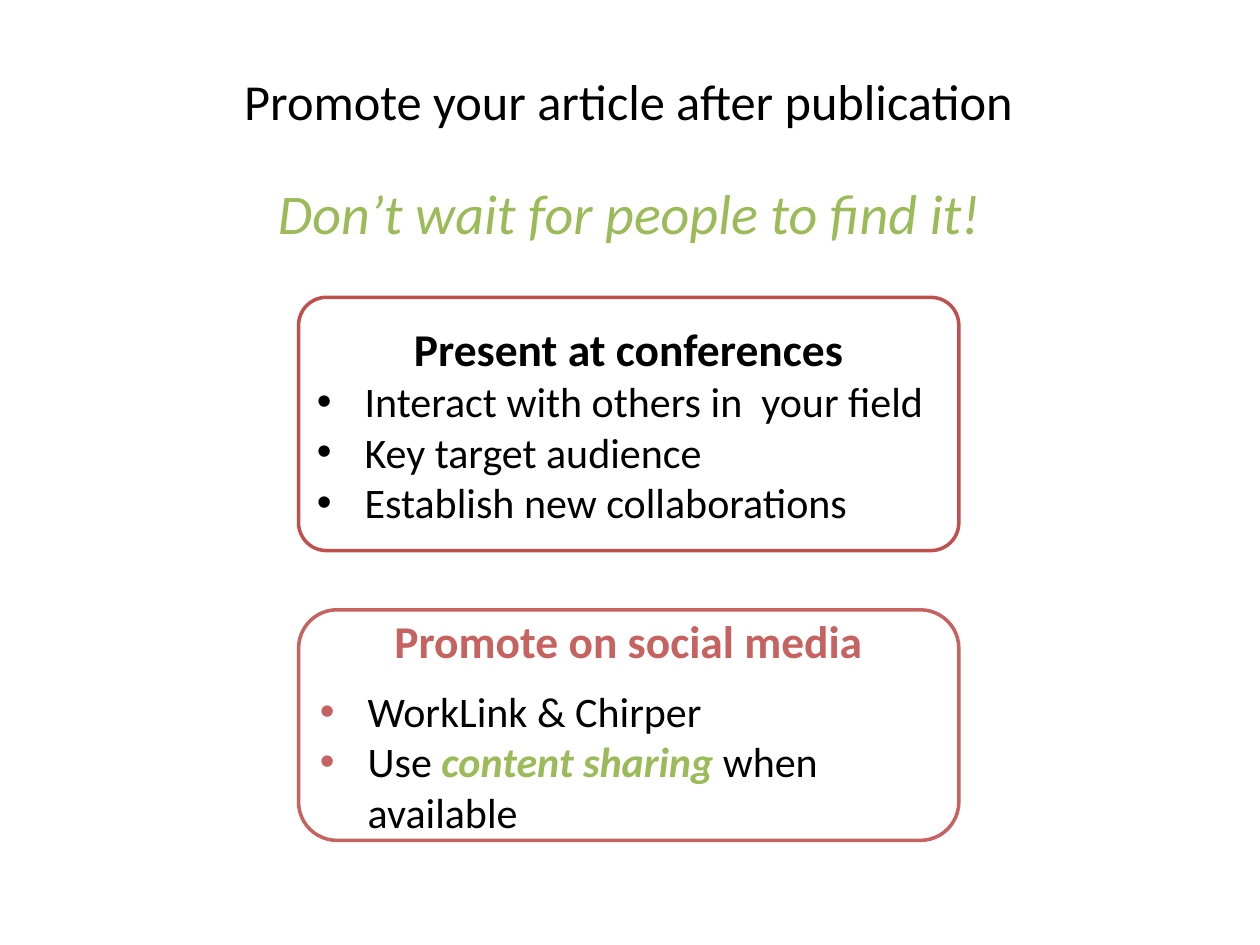
"""Builds a slide on promoting an article after publication."""
from lxml import etree
from pptx import Presentation
from pptx import util as u
from pptx.dml.color import RGBColor
from pptx.enum import shapes, text
from pptx.oxml import ns

BLACK, WHITE, GREEN = "000000", "FFFFFF", "9BBB59"
RED, ROSE = "C0504D", "C6625F"
BOX_LEFT, BOX_WIDTH = 2.37, 5.24


def color(value):
    """Turn a hex string into a colour."""
    return RGBColor.from_string(value)


def add_text(paragraph, content, size=24, fill=BLACK, bold=False, italic=False):
    """Append one formatted run to a paragraph."""
    run = paragraph.add_run()
    run.text = content
    font = run.font
    font.name, font.size = "Calibri", u.Pt(size)
    font.bold, font.italic = bold, italic
    font.color.rgb = color(fill)


def add_bullet(paragraph, fill):
    """Give a paragraph a coloured bullet and a hanging indent."""
    paragraph.alignment = text.PP_ALIGN.LEFT
    properties = paragraph._p.get_or_add_pPr()
    indent = u.Inches(0.38)
    properties.set("marL", str(indent))
    properties.set("indent", str(-indent))
    bullet_color = etree.SubElement(properties, ns.qn("a:buClr"))
    etree.SubElement(bullet_color, ns.qn("a:srgbClr"), val=fill)
    etree.SubElement(properties, ns.qn("a:buFont"), typeface="Arial")
    etree.SubElement(properties, ns.qn("a:buChar"), char="•")


class SlideBuilder:
    """Holds the style and the current slide."""

    inset = u.Inches(0.08)

    def __init__(self, presentation):
        self.slide = presentation.slides.add_slide(presentation.slide_layouts[5])

    def set_insets(self, frame):
        """Apply the common margins and wrapping."""
        frame.margin_left = frame.margin_right = self.inset
        frame.margin_top = frame.margin_bottom = self.inset
        frame.word_wrap = True

    def title(self, content, left, top, width, height):
        """Fill and place the title placeholder."""
        shape = self.slide.shapes.title
        shape.left, shape.top = u.Inches(left), u.Inches(top)
        shape.width, shape.height = u.Inches(width), u.Inches(height)
        frame = shape.text_frame
        frame.auto_size = text.MSO_AUTO_SIZE.NONE
        frame.vertical_anchor = text.MSO_ANCHOR.MIDDLE
        paragraph = frame.paragraphs[0]
        paragraph.alignment = text.PP_ALIGN.CENTER
        add_text(paragraph, content, size=28.8)

    def tagline(self, content, left, top, width, height):
        """Add the centred italic line below the title."""
        shape = self.slide.shapes.add_textbox(
            u.Inches(left), u.Inches(top), u.Inches(width), u.Inches(height))
        self.set_insets(shape.text_frame)
        paragraph = shape.text_frame.paragraphs[0]
        paragraph.alignment = text.PP_ALIGN.CENTER
        add_text(paragraph, content, size=32, fill=GREEN, italic=True)

    def box(self, heading, bullets, top, height, line, heading_fill, bullet_fill,
            corner=0.1667, heading_gap=0):
        """Add a rounded box with a heading and bullets made of (text, format) runs."""
        shape = self.slide.shapes.add_shape(
            shapes.MSO_SHAPE.ROUNDED_RECTANGLE, u.Inches(BOX_LEFT), u.Inches(top),
            u.Inches(BOX_WIDTH), u.Inches(height))
        shape.adjustments[0] = corner
        shape.shadow.inherit = False
        shape.fill.solid()
        shape.fill.fore_color.rgb = color(WHITE)
        shape.line.color.rgb = color(line)
        shape.line.width = u.Pt(2)
        frame = shape.text_frame
        self.set_insets(frame)
        frame.vertical_anchor = text.MSO_ANCHOR.MIDDLE
        paragraph = frame.paragraphs[0]
        paragraph.alignment = text.PP_ALIGN.CENTER
        paragraph.space_after = u.Pt(heading_gap)
        add_text(paragraph, heading, size=26, fill=heading_fill, bold=True)
        for runs in bullets:
            paragraph = frame.add_paragraph()
            add_bullet(paragraph, bullet_fill)
            for content, style in runs:
                add_text(paragraph, content, **style)


def main():
    """Build and save the slide."""
    presentation = Presentation()
    presentation.slide_width, presentation.slide_height = u.Inches(10), u.Inches(7.5)
    builder = SlideBuilder(presentation)
    builder.title("Promote your article after publication", 0.83, 0.59, 8.32, 0.41)
    builder.tagline("Don’t wait for people to find it!", 1.06, 1.34, 7.87, 0.7)
    builder.box(
        "Present at conferences",
        [[("Interact with others in  your field", {})],
         [("Key target audience", {})],
         [("Establish new collaborations", {})]],
        top=2.36, height=2.01, line=RED, heading_fill=BLACK, bullet_fill=BLACK,
        corner=0.11)
    emphasis = {"fill": GREEN, "bold": True, "italic": True}
    builder.box(
        "Promote on social media",
        [[("WorkLink & Chirper", {})],
         [("Use ", {}), ("content sharing ", emphasis), ("when available", {})]],
        top=4.84, height=1.83, line=ROSE, heading_fill=ROSE, bullet_fill=ROSE,
        heading_gap=10)
    presentation.save("out.pptx")


if __name__ == "__main__":
    main()
